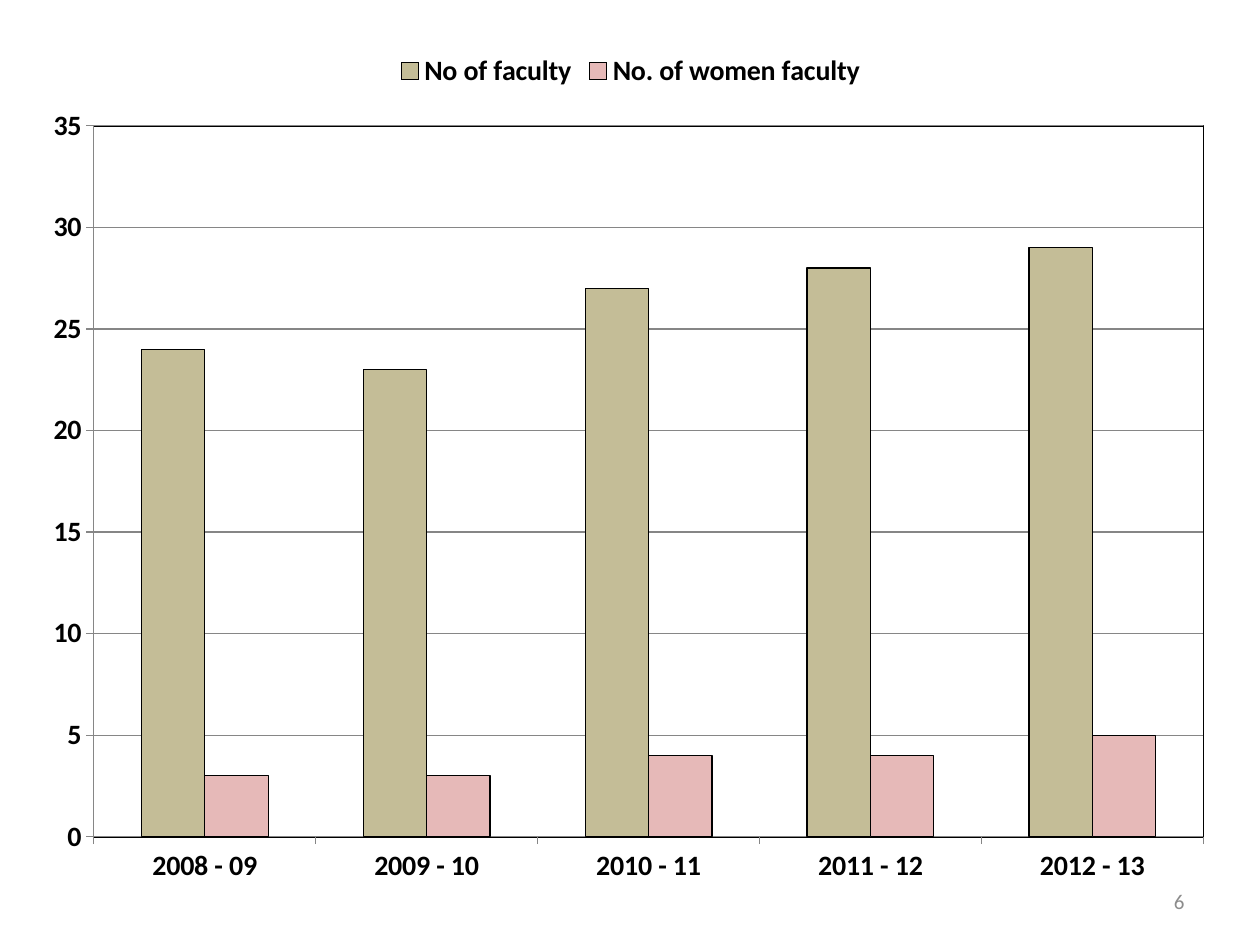
from dataclasses import dataclass

from lxml.etree import SubElement
from pptx import Presentation
from pptx.chart.chart import Chart
from pptx.chart.data import CategoryChartData
from pptx.dml.color import RGBColor as RGB
from pptx.enum.chart import (XL_CHART_TYPE as ChartType, XL_LEGEND_POSITION as LegendPos,
                             XL_TICK_MARK as Tick)
from pptx.enum.text import MSO_ANCHOR as Anchor, PP_ALIGN as Align
from pptx.oxml import parse_xml
from pptx.oxml.ns import nsdecls, qn
from pptx.util import Cm, Pt


@dataclass(frozen=True)
class Theme:
    font: str = "Calibri"
    chart_size: Pt = Pt(16)
    number_size: Pt = Pt(12)
    hairline: Pt = Pt(0.75)
    ink: RGB = RGB(0, 0, 0)
    grid: RGB = RGB(0x86, 0x86, 0x86)
    number: RGB = RGB(0x8C, 0x8C, 0x8C)


@dataclass(frozen=True)
class FacultySeries:
    name: str
    values: tuple[int, ...]
    color: RGB


THEME = Theme()
YEARS = ("2008 - 09", "2009 - 10", "2010 - 11", "2011 - 12", "2012 - 13")
SERIES = (
    FacultySeries("No of faculty", (24, 23, 27, 28, 29), RGB(0xC4, 0xBD, 0x97)),
    FacultySeries("No. of women faculty", (3, 3, 4, 4, 5), RGB(0xE6, 0xB9, 0xB8)),
)
PLOT_BOX = {"x": 0.05, "y": 0.1, "w": 0.93, "h": 0.82}


def style_line(line, color: RGB) -> None:
    line.color.rgb = color
    line.width = THEME.hairline


def frame_plot(chart: Chart) -> None:
    """Fix the inner plot area as shares of the chart and outline it."""
    plot_area = chart._chartSpace.chart.plotArea
    for old in plot_area.findall(qn("c:layout")):
        plot_area.remove(old)
    layout = parse_xml(f"<c:layout {nsdecls('c')}><c:manualLayout/></c:layout>")
    settings = {"layoutTarget": "inner", "xMode": "edge", "yMode": "edge", **PLOT_BOX}
    for tag, value in settings.items():
        SubElement(layout[0], qn(f"c:{tag}")).set("val", str(value))
    plot_area.insert(0, layout)
    plot_area.append(parse_xml(
        f"<c:spPr {nsdecls('c', 'a')}><a:noFill/><a:ln w='{THEME.hairline}'><a:solidFill>"
        f"<a:srgbClr val='{THEME.ink}'/></a:solidFill></a:ln></c:spPr>"))


def add_faculty_chart(s) -> None:
    data = CategoryChartData()
    data.categories = YEARS
    for series in SERIES:
        data.add_series(series.name, series.values)
    chart = s.shapes.add_chart(ChartType.COLUMN_CLUSTERED, Cm(0.69), Cm(0.79),
                               Cm(24.05), Cm(17.48), data).chart
    chart.has_title = False
    font = chart.font
    font.name, font.size, font.bold = THEME.font, THEME.chart_size, True
    font.color.rgb = THEME.ink

    chart.has_legend = True
    chart.legend.position = LegendPos.TOP
    chart.legend.include_in_layout = False

    plot = chart.plots[0]
    plot.gap_width, plot.overlap, plot.vary_by_categories = 150, 0, False
    for bars, series in zip(plot.series, SERIES):
        bars.format.fill.solid()
        bars.format.fill.fore_color.rgb = series.color
        style_line(bars.format.line, THEME.ink)

    for axis in (chart.category_axis, chart.value_axis):
        axis.major_tick_mark, axis.minor_tick_mark = Tick.OUTSIDE, Tick.NONE
        style_line(axis.format.line, THEME.grid)
    values = chart.value_axis
    values.minimum_scale, values.maximum_scale, values.major_unit = 0, 35, 5
    style_line(values.major_gridlines.format.line, THEME.grid)
    frame_plot(chart)


def add_slide_number(s, number: str) -> None:
    tf = s.shapes.add_textbox(Cm(18.21), Cm(17.65), Cm(5.92), Cm(1.02)).text_frame
    tf.word_wrap = True
    tf.vertical_anchor = Anchor.MIDDLE
    p = tf.paragraphs[0]
    p.alignment = Align.RIGHT
    r = p.add_run()
    r.text = number
    r.font.name, r.font.size = THEME.font, THEME.number_size
    r.font.color.rgb = THEME.number


def main() -> None:
    prs = Presentation()
    prs.slide_width, prs.slide_height = Cm(25.4), Cm(19.05)
    s = prs.slides.add_slide(prs.slide_layouts[6])
    add_faculty_chart(s)
    add_slide_number(s, "6")
    prs.save("out.pptx")


if __name__ == "__main__":
    main()
